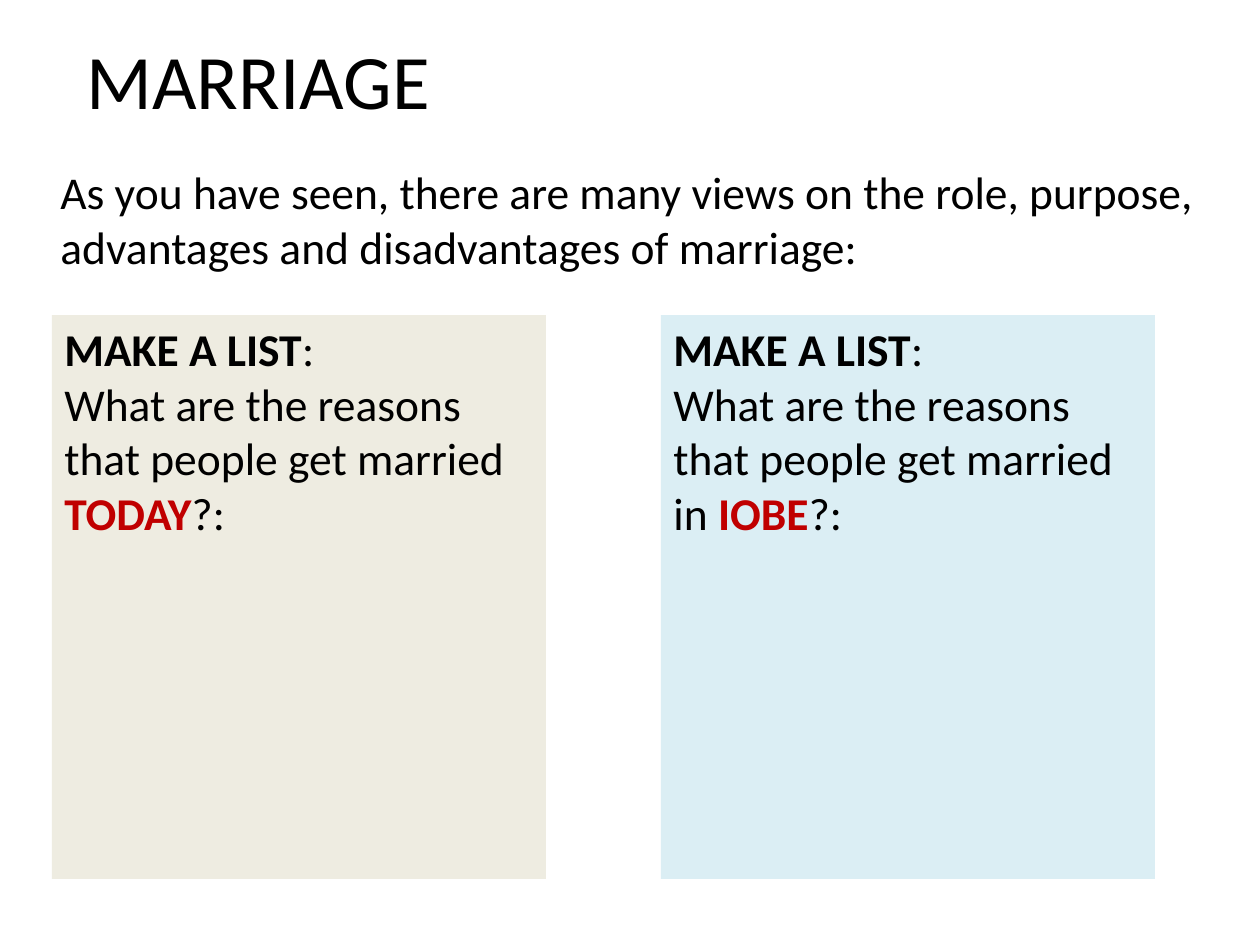
"""Build the marriage discussion slide with two list panels."""
from pptx import Presentation, util as u
from pptx.dml.color import RGBColor
from pptx.enum import shapes, text

COLORS = {"ink": "000000", "red": "C00000", "sand": "EEECE1", "sky": "DBEEF4"}
SCALE = 914400 // 126


def px(n):
    """Turn pixels into EMU."""
    return u.Emu(n * SCALE)


def tint(name):
    """Look up a named colour."""
    return RGBColor.from_string(COLORS[name])


def write(shape, paras, size=26, anchor=text.MSO_ANCHOR.TOP):
    """Fill a shape with paragraphs of (words, colour, bold) runs."""
    frame = shape.text_frame
    frame.word_wrap = True
    frame.vertical_anchor = anchor
    for i, runs in enumerate(paras):
        para = frame.paragraphs[0] if i == 0 else frame.add_paragraph()
        para.alignment = text.PP_ALIGN.LEFT
        for words, color, bold in runs:
            run = para.add_run()
            run.text = words
            font = run.font
            font.name, font.size, font.bold = "Calibri", u.Pt(size), bold
            font.color.rgb = tint(color)


def label(slide, box, words, **style):
    """Add a plain text box."""
    shape = slide.shapes.add_textbox(*map(px, box))
    write(shape, [[(words, "ink", False)]], **style)


def panel(slide, left, fill, ask, key):
    """Add a filled panel that asks for a list."""
    box = map(px, (left, 315, 494, 564))
    shape = slide.shapes.add_shape(shapes.MSO_SHAPE.RECTANGLE, *box)
    shape.shadow.inherit = False
    shape.fill.solid()
    shape.fill.fore_color.rgb = tint(fill)
    shape.line.fill.background()
    write(shape, [
        [("MAKE A LIST", "ink", True), (":", "ink", False)],
        [(ask, "ink", False), (key, "red", True), ("?:", "ink", False)],
    ])


def main():
    """Build and save the slide."""
    deck = Presentation()
    deck.slide_width, deck.slide_height = px(1260), px(945)
    slide = deck.slides.add_slide(deck.slide_layouts[6])
    label(slide, (74, 0, 1134, 158), "MARRIAGE", size=44,
          anchor=text.MSO_ANCHOR.MIDDLE)
    label(slide, (48, 158, 1212, 147),
          "As you have seen, there are many views on the role, purpose, "
          "advantages and disadvantages of marriage:")
    ask = "What are the reasons that people get married "
    panel(slide, 52, "sand", ask, "TODAY")
    panel(slide, 661, "sky", ask + "in ", "IOBE")
    deck.save("out.pptx")


if __name__ == "__main__":
    main()
